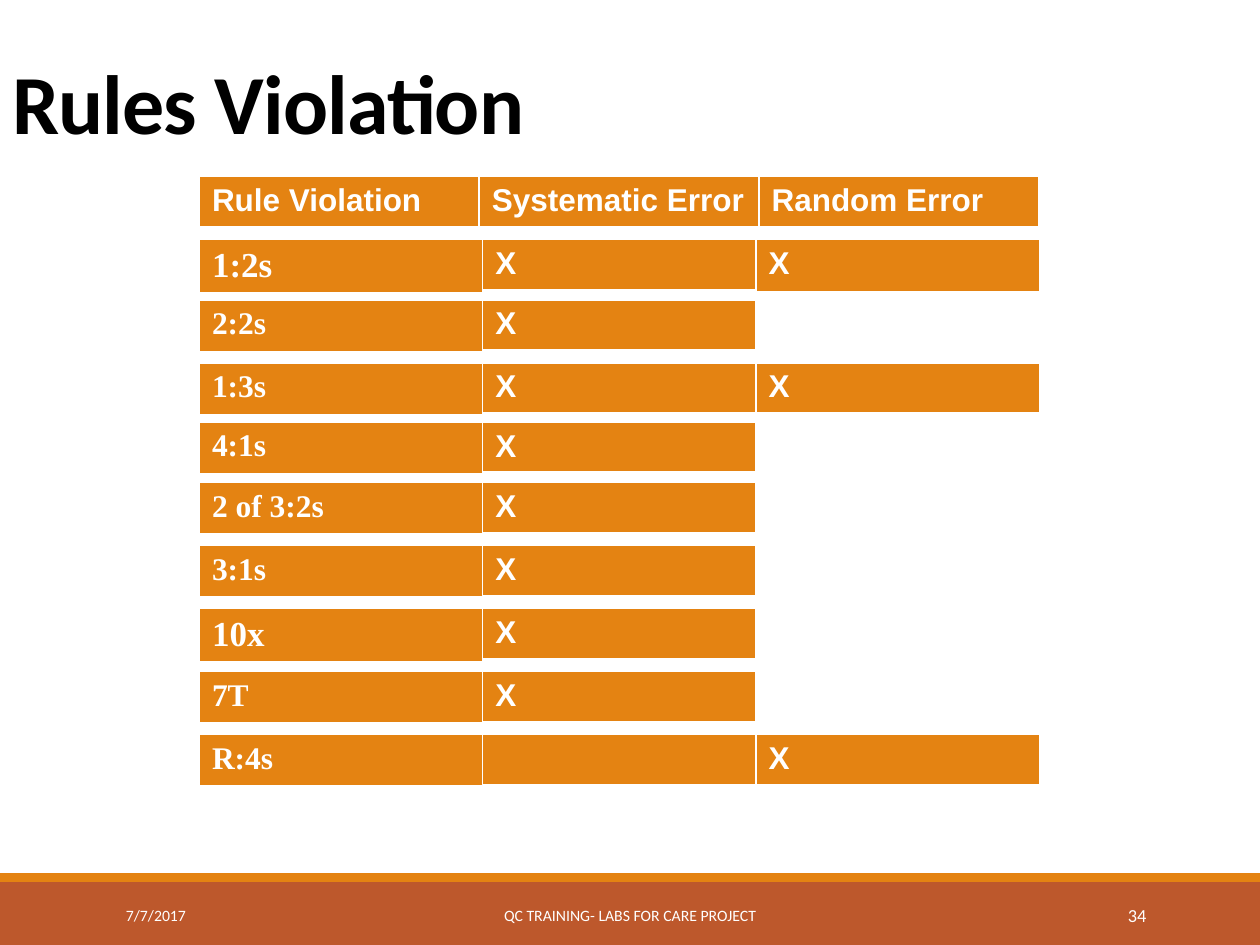
"""Builds the slide that lists which error each control rule detects."""
from pptx import Presentation
from pptx.dml.color import RGBColor
from pptx.enum import shapes, text
from pptx.oxml import parse_xml
from pptx.oxml.ns import nsdecls
from pptx.util import Cm, Pt

THEME = {
    "white": "FFFFFF", "black": "000000", "rust": "BD582C", "orange": "E48312",
    "sans": "Arial", "serif": "Times New Roman", "body": "Calibri",
    "title": 48, "large": 20, "cell": 18, "page": 10.5, "foot": 9,
}
TITLE = "Rules Violation"
HEADS = ["Rule Violation", "Systematic Error", "Random Error"]
RULES = [
    (4.83, "1:2s", "large", "X", "X"),
    (6.05, "2:2s", "cell", "X", None),
    (7.32, "1:3s", "cell", "X", "X"),
    (8.51, "4:1s", "cell", "X", None),
    (9.73, "2 of 3:2s", "cell", "X", None),
    (11, "3:1s", "cell", "X", None),
    (12.27, "10x", "large", "X", None),
    (13.54, "7T", "cell", "X", None),
    (14.81, "R:4s", "cell", "", "X"),
]
BANDS = [(17.78, 1.27, "rust"), (17.6, 0.18, "orange")]
FOOT = [
    (2.29, 5.16, "7/7/2017", "foot", "LEFT"),
    (7.67, 10.06, "QC TRAINING- LABS FOR CARE PROJECT", "foot", "CENTER"),
    (20.62, 2.74, "34", "page", "RIGHT"),
]
LEFT, HEAD_TOP, HEAD_WIDE = 4.02, 3.56, 5.64
WIDTHS = [5.71, 5.51, 5.71]
ROW = 1.04
TALL = {"large": 1.09, "cell": 1.07}
EDGES = [("lnL", 1), ("lnR", 1), ("lnT", 1), ("lnB", 3)]


def color(name):
    return RGBColor.from_string(THEME[name])


def style(para, size, face, ink="white", bold=False):
    for run in para.runs:
        font = run.font
        font.size, font.name, font.bold = Pt(THEME[size]), THEME[face], bold
        font.color.rgb = color(ink)


def add_text(slide, box, words, size, align, anchor, **look):
    frame = slide.shapes.add_textbox(*map(Cm, box)).text_frame
    frame.word_wrap = True
    frame.vertical_anchor = anchor
    frame.text = words
    para = frame.paragraphs[0]
    para.alignment = align
    style(para, size, "body", **look)
    return para


def add_edges(cell):
    props = cell._tc.get_or_add_tcPr()
    for spot, (tag, wide) in enumerate(EDGES):
        props.insert(spot, parse_xml(
            f'<a:{tag} {nsdecls("a")} w="{Pt(wide)}"><a:solidFill>'
            f'<a:srgbClr val="{THEME["white"]}"/></a:solidFill></a:{tag}>'))


def add_grid(slide, left, top, wide, tall, words, size="cell", face="sans"):
    box = map(Cm, (left, top, wide * len(words), tall))
    grid = slide.shapes.add_table(1, len(words), *box).table
    for col, word in enumerate(words):
        grid.columns[col].width = Cm(wide)
        cell = grid.cell(0, col)
        cell.text = word
        cell.fill.solid()
        cell.fill.fore_color.rgb = color("orange")
        add_edges(cell)
        style(cell.text_frame.paragraphs[0], size, face, bold=True)


def add_rule(slide, top, name, size, *marks):
    add_grid(slide, LEFT, top, WIDTHS[0], TALL[size], [name], size, "serif")
    for col, mark in enumerate(marks, 1):
        if mark is not None:
            tall = TALL[size] if size == "large" and col == 2 else ROW
            left = LEFT + sum(WIDTHS[:col])
            add_grid(slide, left, top, WIDTHS[col], tall, [mark])


def main():
    deck = Presentation()
    deck.slide_width, deck.slide_height = Cm(25.4), Cm(19.05)
    slide = deck.slides.add_slide(deck.slide_layouts[6])
    for top, tall, fill in BANDS:
        band = slide.shapes.add_shape(
            shapes.MSO_SHAPE.RECTANGLE, 0, Cm(top), deck.slide_width, Cm(tall))
        band.shadow.inherit = False
        band.fill.solid()
        band.fill.fore_color.rgb = color(fill)
        band.line.fill.background()
    for left, wide, words, size, side in FOOT:
        add_text(slide, (left, 17.94, wide, 1.01), words, size,
                 text.PP_ALIGN[side], text.MSO_ANCHOR.MIDDLE)
    title = add_text(slide, (0, 0, 22.86, 3.18), TITLE, "title",
                     text.PP_ALIGN.LEFT, text.MSO_ANCHOR.BOTTOM,
                     ink="black", bold=True)
    title.line_spacing = 0.85
    title.runs[0].font._element.set("spc", "-50")
    add_grid(slide, LEFT, HEAD_TOP, HEAD_WIDE, ROW, HEADS)
    for rule in RULES:
        add_rule(slide, *rule)
    deck.save("out.pptx")


if __name__ == "__main__":
    main()
